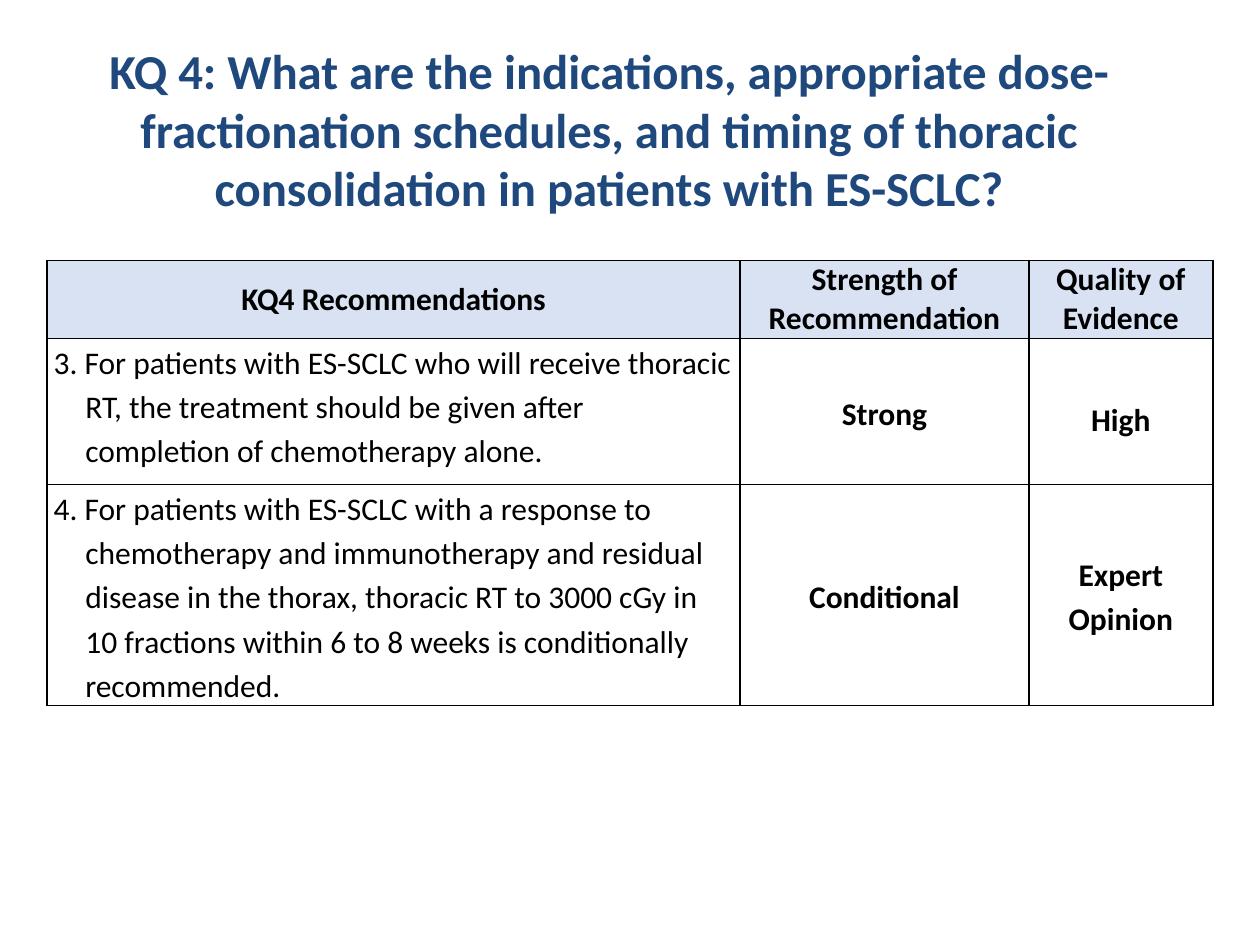
from lxml import etree
from pptx import Presentation
from pptx.dml.color import RGBColor
from pptx.enum import text
from pptx.oxml.ns import qn
from pptx.util import Cm, Pt


def style(p, size, color, bold):
    p.font.name = "Calibri"
    p.font.size = Pt(size)
    p.font.bold = bold
    p.font.color.rgb = RGBColor.from_string(color)


def add_borders(cell, color, width):
    """Draw all four sides; call before setting the cell fill."""
    tcPr = cell._tc.get_or_add_tcPr()
    for side in ("a:lnL", "a:lnR", "a:lnT", "a:lnB"):
        ln = etree.SubElement(tcPr, qn(side), w=str(Pt(width)))
        fill = etree.SubElement(ln, qn("a:solidFill"))
        etree.SubElement(fill, qn("a:srgbClr"), val=color)


prs = Presentation()
prs.slide_width, prs.slide_height = Cm(25.4), Cm(19.05)
s = prs.slides.add_slide(prs.slide_layouts[6])

# Title
title = s.shapes.add_textbox(Cm(0.43), Cm(0.7), Cm(23.7), Cm(4.4))
tf = title.text_frame
tf.word_wrap = True
p = tf.paragraphs[0]
p.text = ("KQ 4: What are the indications, appropriate dose-fractionation schedules, "
          "and timing of thoracic consolidation in patients with ES-SCLC?")
p.alignment = text.PP_ALIGN.CENTER
style(p, 27.9, "1F497D", True)

# Recommendations table
rows = [
    ("KQ4 Recommendations", "Strength of Recommendation", "Quality of Evidence"),
    ("3. For patients with ES-SCLC who will receive thoracic RT, the treatment "
     "should be given after completion of chemotherapy alone.", "Strong", "High"),
    ("4. For patients with ES-SCLC with a response to chemotherapy and immunotherapy "
     "and residual disease in the thorax, thoracic RT to 3000 cGy in 10 fractions "
     "within 6 to 8 weeks is conditionally recommended.", "Conditional", "Expert Opinion"),
]
widths = [13.97, 5.82, 3.71]
heights = [1.57, 2.95, 4.45]
table = s.shapes.add_table(len(rows), len(widths), Cm(0.95), Cm(5.25),
                           Cm(sum(widths)), Cm(sum(heights))).table
for column, width in zip(table.columns, widths):
    column.width = Cm(width)
for row, height in zip(table.rows, heights):
    row.height = Cm(height)

for i, row in enumerate(rows):
    for j, words in enumerate(row):
        header, recommendation = i == 0, i > 0 and j == 0
        cell = table.cell(i, j)
        add_borders(cell, "000000", 1)
        if header:
            cell.fill.solid()
            cell.fill.fore_color.rgb = RGBColor.from_string("D9E2F3")
        else:
            cell.fill.background()
        cell.margin_left = cell.margin_right = Cm(0.18 if header else 0.13)
        cell.margin_top = cell.margin_bottom = 0
        p = cell.text_frame.paragraphs[0]
        p.text = words
        if recommendation:
            cell.vertical_anchor = text.MSO_ANCHOR.TOP
            pPr = p._p.get_or_add_pPr()
            pPr.set("marL", str(Cm(0.64)))
            pPr.set("indent", str(-Cm(0.64)))
        else:
            cell.vertical_anchor = text.MSO_ANCHOR.MIDDLE
            p.alignment = text.PP_ALIGN.CENTER
        if not header:
            p.line_spacing = 1.5 if words == "High" else 1.15
        style(p, 18, "000000", not recommendation)

prs.save("out.pptx")
